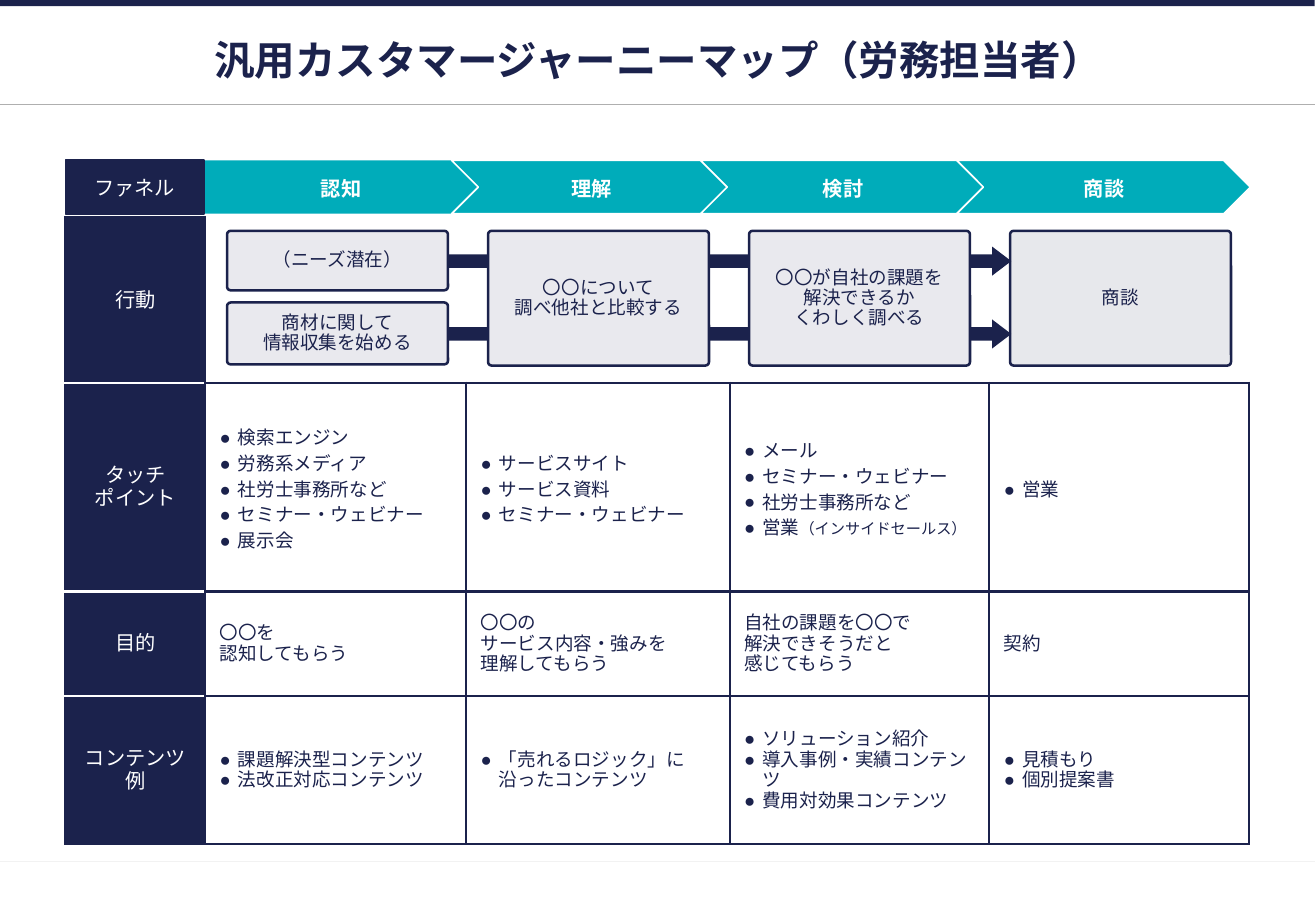
from dataclasses import dataclass

from lxml import etree
from pptx import Presentation, util as u
from pptx.dml.color import RGBColor
from pptx.enum import lang, shapes, text
from pptx.oxml import ns

PX = 9144  # EMU per px, 100 px to the inch


@dataclass(frozen=True)
class Theme:
    navy: str = "1B224C"
    teal: str = "00ACBA"
    pale: str = "E9E9EE"
    white: str = "FFFFFF"
    rule: str = "AFAFAF"
    foot: str = "F2F2F2"
    font: str = "Arial"
    title: int = 24
    head: int = 12
    body: int = 11
    note: int = 9


T = Theme()
KIND = shapes.MSO_SHAPE
MID = text.PP_ALIGN.CENTER


def px(*vals):
    return [round(v * PX) for v in vals]


def sub(node, tag, **attrs):
    return etree.SubElement(node, ns.qn(tag), attrs)


def add_dot(para):
    props = para._p.get_or_add_pPr()
    props.set("marL", str(15 * PX))
    props.set("indent", str(-15 * PX))
    sub(sub(props, "a:buClr"), "a:srgbClr", val=T.navy)
    sub(props, "a:buFont", typeface=T.font)
    sub(props, "a:buChar", char="●")


def write(frame, paras, size=T.body, color=T.navy, bold=False,
          align=None, gap=None, dots=False):
    """A paragraph is a string or a list of (string, size) pairs."""
    for i, item in enumerate(paras):
        para = frame.paragraphs[0] if i == 0 else frame.add_paragraph()
        if dots:
            add_dot(para)
        if align is not None:
            para.alignment = align
        if gap:
            para.line_spacing = gap
        for words, pts in [(item, size)] if isinstance(item, str) else item:
            for n, line in enumerate(words.split("\n")):
                if n:
                    para.add_line_break()
                run = para.add_run()
                run.text = line
                font = run.font
                font.size, font.bold = u.Pt(pts), bold
                font.color.rgb = RGBColor.from_string(color)
                font.language_id = lang.MSO_LANGUAGE_ID.JAPANESE
                font.name = T.font
                sub(run._r.get_or_add_rPr(), "a:ea", typeface=T.font)


def set_box(frame, pads):
    frame.word_wrap = True
    frame.auto_size = text.MSO_AUTO_SIZE.NONE
    frame.vertical_anchor = text.MSO_ANCHOR.MIDDLE
    (frame.margin_left, frame.margin_top,
     frame.margin_right, frame.margin_bottom) = px(*pads)


def add_block(slide, kind, box, fill=None, line=None, width=1, adj=()):
    shape = slide.shapes.add_shape(kind, *px(*box))
    shape.shadow.inherit = False
    for paint, tint in ((shape.fill, fill), (shape.line.fill, line)):
        if tint:
            paint.solid()
            paint.fore_color.rgb = RGBColor.from_string(tint)
        else:
            paint.background()
    if line:
        shape.line.width = u.Pt(width)
    for i, val in enumerate(adj):
        shape.adjustments[i] = val
    return shape


def add_rule(slide, y, width, color):
    rule = slide.shapes.add_connector(
        shapes.MSO_CONNECTOR.STRAIGHT, *px(0, y, width, y))
    rule.line.color.rgb = RGBColor.from_string(color)
    rule.line.width = u.Pt(0.75)
    sub(rule._element.spPr, "a:effectLst")


def draw_frame(slide, width):
    add_rule(slide, 709, width, T.foot)
    add_block(slide, KIND.RECTANGLE, (0, 0, width, 5), T.navy)
    add_rule(slide, 86, width, T.rule)
    title = slide.shapes.title
    title.left, title.top, title.width, title.height = px(50, 29, 984, 39)
    set_box(title.text_frame, (4, 4, 4, 4))
    write(title.text_frame, ["汎用カスタマージャーニーマップ（労務担当者）"],
          size=T.title, bold=True, align=MID)


def set_edges(cell, **edges):
    """Colour the L, R, T and B sides; None leaves a side bare."""
    props = cell._tc.get_or_add_tcPr()
    for i, side in enumerate("LRTB"):
        edge = etree.Element(ns.qn("a:ln" + side), {"w": str(u.Pt(1.5))})
        if edges[side]:
            sub(sub(edge, "a:solidFill"), "a:srgbClr", val=edges[side])
        else:
            sub(edge, "a:noFill")
        props.insert(i, edge)


# Row label, row height, line gap, bullets, cells
ROWS = [
    ("行動", 136, None, False, [[]] * 4),
    ("タッチ\nポイント", 172, 1.25, True, [
        ["検索エンジン", "労務系メディア", "社労士事務所など",
         "セミナー・ウェビナー", "展示会"],
        ["サービスサイト", "サービス資料", "セミナー・ウェビナー"],
        ["メール", "セミナー・ウェビナー", "社労士事務所など",
         [("営業", T.body), ("（インサイドセールス）", T.note)]],
        ["営業"]]),
    ("目的", 86, None, False, [
        ["〇〇を", "認知してもらう"],
        ["〇〇の", "サービス内容・強みを", "理解してもらう"],
        ["自社の課題を〇〇で", "解決できそうだと", "感じてもらう"],
        ["契約"]]),
    ("コンテンツ例", 122, None, True, [
        ["課題解決型コンテンツ", "法改正対応コンテンツ"],
        ["「売れるロジック」に沿ったコンテンツ"],
        ["ソリューション紹介", "導入事例・実績コンテンツ", "費用対効果コンテンツ"],
        ["見積もり", "個別提案書"]]),
]


def draw_table(slide, left, top, cols):
    high = sum(row[1] for row in ROWS)
    table = slide.shapes.add_table(
        len(ROWS), len(cols), *px(left, top, sum(cols), high)).table
    table.first_row = table.horz_banding = False
    for col, wide in zip(table.columns, cols):
        col.width = wide * PX
    last = len(ROWS) - 1
    for r, (label, tall, gap, dots, cells) in enumerate(ROWS):
        table.rows[r].height = tall * PX
        for c, paras in enumerate([[label], *cells]):
            cell = table.cell(r, c)
            cell.vertical_anchor = text.MSO_ANCHOR.MIDDLE
            (cell.margin_left, cell.margin_top, cell.margin_right,
             cell.margin_bottom) = px(12, 12, 8 if c else 12, 12)
            if r == 0 and c:
                cell.fill.background()
            else:
                cell.fill.solid()
                cell.fill.fore_color.rgb = RGBColor.from_string(
                    T.white if c else T.navy)
            if c == 0:
                write(cell.text_frame, paras, size=T.head, color=T.white, align=MID)
                set_edges(cell, L=T.navy, R=T.navy, T=T.white if r else T.navy,
                          B=T.navy if r == last else T.white)
            else:
                write(cell.text_frame, paras, gap=gap, dots=dots)
                set_edges(cell, L=T.navy if r or c == 1 else None,
                          R=T.navy if r else None, T=T.navy if r else None, B=T.navy)


def draw_funnel(slide, left, top, high):
    # Stage, outline, its x and width, label x and width
    stages = [("認知", KIND.PENTAGON, 124, 242, 112, 230),
              ("理解", KIND.CHEVRON, 318, 253, 319, 229),
              ("検討", KIND.CHEVRON, 523, 260, 523, 235),
              ("商談", KIND.CHEVRON, 734, 242, 757, 197)]
    for i, (name, kind, x, wide, at, span) in enumerate(stages):
        add_block(slide, kind, (left + x, top, wide, high),
                  T.teal, T.white, adj=[0.5])
        box = (left + at, top, span, high)
        if i == 0:
            label = add_block(slide, KIND.RECTANGLE, box, T.teal)
        else:
            label = slide.shapes.add_textbox(*px(*box))
        set_box(label.text_frame, (4, 4, 4, 0))
        write(label.text_frame, [name], size=T.head, color=T.white,
              bold=True, align=MID, gap=0.9)
    head = add_block(slide, KIND.RECTANGLE, (left, top, 114, high), T.navy, T.navy)
    set_box(head.text_frame, (16, 4, 16, 4))
    write(head.text_frame, ["ファネル"], size=T.head, color=T.white, align=MID)


def draw_steps(slide, left, top, wide, step):
    for y in (13, 73):
        add_block(slide, KIND.RIGHT_ARROW, (left + wide, top + y, 464, 24),
                  T.navy, adj=[0.465, 0.659])
    # Column, y, height, lines
    cards = [(0, 0, 49, ["（ニーズ潜在）"]),
             (0, 59, 51, ["商材に関して", "情報収集を始める"]),
             (1, 0, 111, ["〇〇について", "調べ他社と比較する"]),
             (2, 0, 111, ["〇〇が自社の課題を", "解決できるか", "くわしく調べる"]),
             (3, 0, 111, ["商談"])]
    for col, y, high, lines in cards:
        goal = col == 3
        card = add_block(slide, KIND.ROUNDED_RECTANGLE,
                         (left + col * step, top + y, wide, high),
                         T.navy if goal else T.pale, T.navy, 1.5, [3 / high])
        if goal:
            tint = card._element.spPr.find(ns.qn("a:solidFill"))[0]
            sub(tint, "a:alpha", val="10000")
        set_box(card.text_frame, (8, 4, 8, 4))
        write(card.text_frame, lines, align=MID, gap=0.9)


def main():
    deck = Presentation()
    deck.slide_width, deck.slide_height = px(1084, 750)
    slide = deck.slides.add_slide(deck.slide_layouts[5])
    draw_frame(slide, 1083)
    draw_table(slide, 54, 179, [115, 215, 217, 214, 214])
    draw_funnel(slide, 54, 132, 44)
    draw_steps(slide, 187, 190, 182, 215)
    deck.save("out.pptx")


if __name__ == "__main__":
    main()
